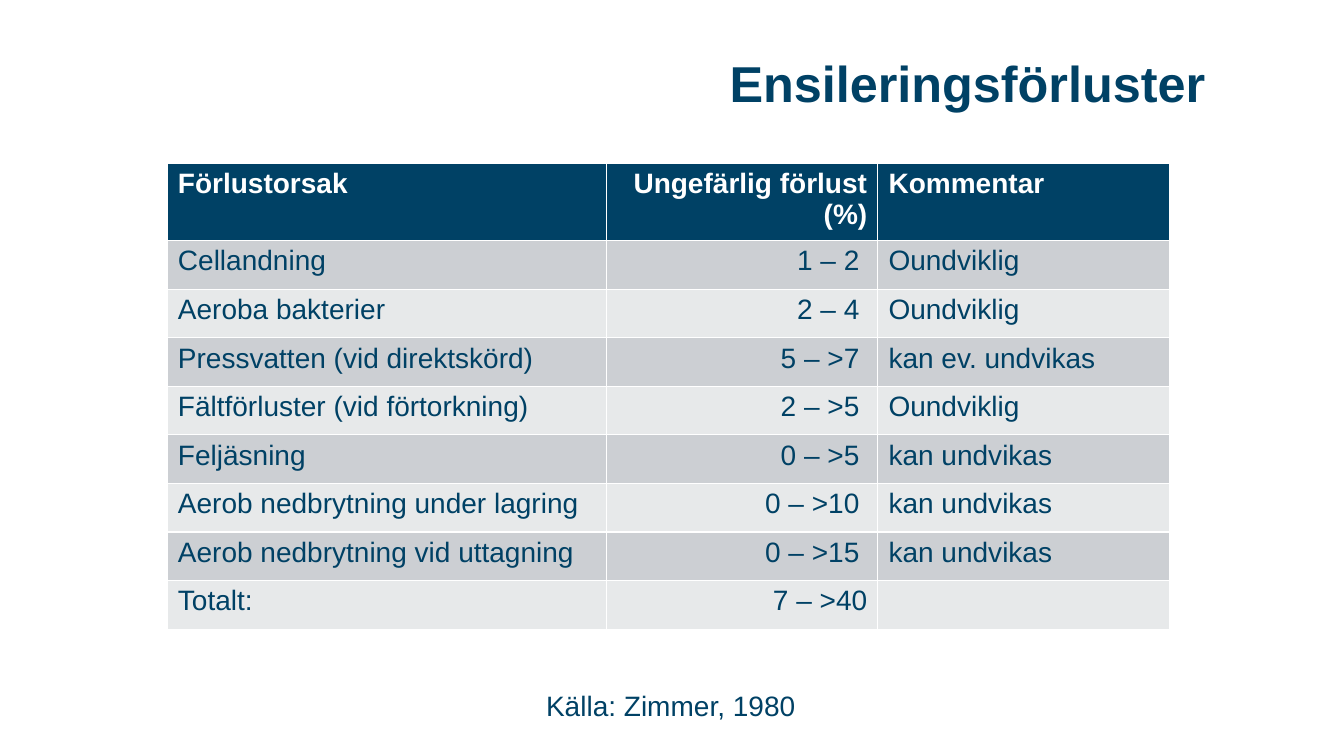
from pptx import Presentation
from pptx.dml.color import RGBColor
from pptx.enum.text import MSO_ANCHOR, PP_ALIGN
from pptx.util import Pt

LEFT, RIGHT = PP_ALIGN.LEFT, PP_ALIGN.RIGHT
MIDDLE = MSO_ANCHOR.MIDDLE

NAVY, WHITE = "004165", "FFFFFF"
BANDS = ("CCCFD3", "E7E9EA")
COLUMN_WIDTHS = (313.9, 193.7, 208.1)
COLUMN_ALIGNS = (LEFT, RIGHT, LEFT)
ROW_HEIGHT = 34.7

LOSSES = (
    ("Förlustorsak", "Ungefärlig förlust (%)", "Kommentar"),
    ("Cellandning", "1 – 2 ", "Oundviklig"),
    ("Aeroba bakterier", "2 – 4 ", "Oundviklig"),
    ("Pressvatten (vid direktskörd)", "5 – >7 ", "kan ev. undvikas"),
    ("Fältförluster (vid förtorkning)", "2 – >5 ", "Oundviklig"),
    ("Feljäsning", "0 – >5 ", "kan undvikas"),
    ("Aerob nedbrytning under lagring", "0 – >10 ", "kan undvikas"),
    ("Aerob nedbrytning vid uttagning", "0 – >15 ", "kan undvikas"),
    ("Totalt:", "7 – >40", ""),
)


def color(hex_string):
    return RGBColor.from_string(hex_string)


def write(frame, text, size, ink, bold=False, align=LEFT):
    paragraph = frame.paragraphs[0]
    paragraph.alignment = align
    paragraph.font.size = Pt(size)
    if text:
        run = paragraph.add_run()
        run.text = text
        run.font.name = "Arial"
        run.font.size = Pt(size)
        run.font.bold = bold
        run.font.color.rgb = color(ink)
    return paragraph


def add_heading(slide, left, top, width, height):
    heading = slide.shapes.add_textbox(Pt(left), Pt(top), Pt(width), Pt(height))
    frame = heading.text_frame
    frame.word_wrap = True
    frame.vertical_anchor = MIDDLE
    write(frame, "Ensileringsförluster", 36, NAVY, True, RIGHT).line_spacing = 0.9


def add_loss_table(slide, left, top):
    table = slide.shapes.add_table(
        len(LOSSES), len(COLUMN_WIDTHS), Pt(left), Pt(top),
        Pt(sum(COLUMN_WIDTHS)), Pt(ROW_HEIGHT * len(LOSSES))).table
    for column, width in zip(table.columns, COLUMN_WIDTHS):
        column.width = Pt(width)
    for index, losses in enumerate(LOSSES):
        header = index == 0
        table.rows[index].height = Pt(ROW_HEIGHT)
        for position, text in enumerate(losses):
            cell = table.cell(index, position)
            cell.margin_left = cell.margin_right = Pt(7.6)
            cell.margin_top = cell.margin_bottom = Pt(3.6)
            cell.fill.solid()
            cell.fill.fore_color.rgb = color(NAVY if header else BANDS[(index - 1) % 2])
            write(cell.text_frame, text, 20, WHITE if header else NAVY,
                  header, COLUMN_ALIGNS[position])


def add_citation(slide, left, top, width, height):
    citation = slide.shapes.add_textbox(Pt(left), Pt(top), Pt(width), Pt(height))
    frame = citation.text_frame
    frame.word_wrap = False
    frame.vertical_anchor = MIDDLE
    frame.margin_bottom = 0
    write(frame, "Källa: Zimmer, 1980", 20, NAVY)


def main():
    deck = Presentation()
    deck.slide_width, deck.slide_height = Pt(960), Pt(540)
    slide = deck.slides.add_slide(deck.slide_layouts[6])
    add_heading(slide, 119.5, 23.8, 748.8, 74.9)
    add_loss_table(slide, 119.5, 116.6)
    add_citation(slide, 383, 488.2, 194.4, 28)
    deck.save("out.pptx")


if __name__ == "__main__":
    main()
